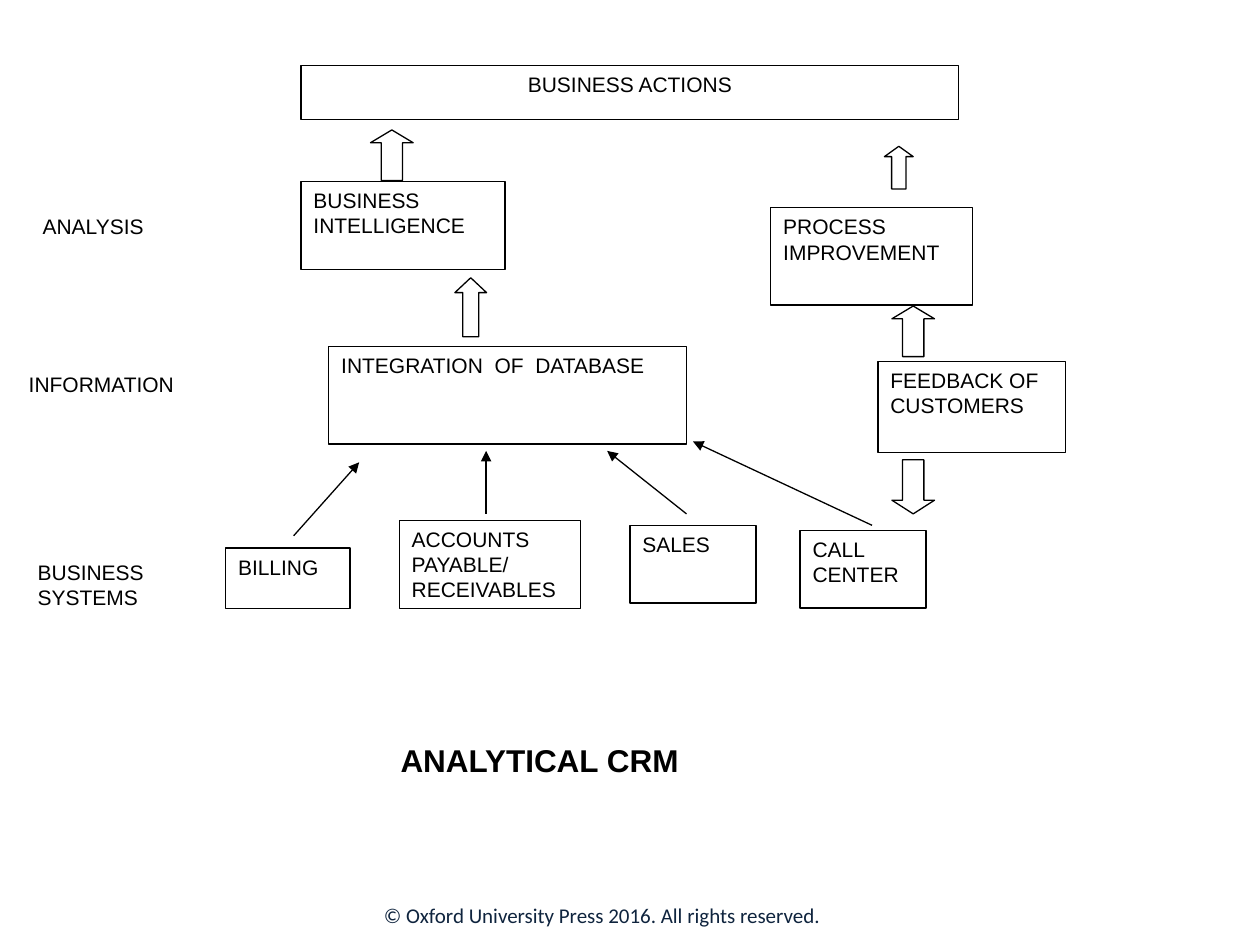
from lxml.etree import SubElement
from pptx import Presentation
from pptx.dml.color import RGBColor
from pptx.enum.shapes import MSO_CONNECTOR as Link, MSO_SHAPE as Preset
from pptx.enum.text import MSO_ANCHOR as Anchor, PP_ALIGN as Align
from pptx.oxml.ns import qn
from pptx.util import Cm, Pt

COLORS = {"ink": "000000", "paper": "FFFFFF", "copyright": "0F243E"}

ANALYSIS = {
    "label": ("ANALYSIS", 0.31, 0.22, 2.57, 2.69, 1.49),
    "nodes": [
        ("BUSINESS\nINTELLIGENCE", 5.77, 1.06, 4.11, 1.78),
        ("PROCESS\nIMPROVEMENT", 15.24, 1.59, 4.06, 1.96),
    ],
    "arrows": [
        (Preset.UP_ARROW, 7.17, 0.02, 0.86, 1.02, 0.3),
        (Preset.UP_ARROW, 17.53, 0.35, 0.58, 0.86, 0.36),
    ],
    "flows": [],
}
INFORMATION = {
    "label": ("INFORMATION", 0.03, 1.23, 3.48, 2.06, 0.67),
    "nodes": [
        ("INTEGRATION  OF  DATABASE", 6.33, 1.39, 7.21, 1.96),
        ("FEEDBACK OF CUSTOMERS", 17.4, 1.69, 3.78, 1.83),
    ],
    "arrows": [
        (Preset.UP_ARROW, 8.87, 0, 0.64, 1.19, 0.47),
        (Preset.UP_ARROW, 17.68, 0.57, 0.86, 1.02, 0.3),
    ],
    "flows": [],
}
SYSTEMS = {
    "label": ("BUSINESS\nSYSTEMS", 0.21, 1.69, 2.67, 3.07, 0.69),
    "nodes": [
        ("BILLING", 4.25, 2.15, 2.51, 1.22),
        ("ACCOUNTS PAYABLE/ RECEIVABLES", 7.75, 1.59, 3.66, 1.78),
        ("SALES", 12.4, 1.69, 2.54, 1.57),
        ("CALL\nCENTER", 15.83, 1.79, 2.54, 1.57),
    ],
    "arrows": [(Preset.DOWN_ARROW, 17.68, 0.37, 0.86, 1.09, 0.32)],
    "flows": [
        (5.62, 1.9, 6.94, 0.42),
        (9.5, 1.46, 9.5, 0.19),
        (13.54, 1.46, 11.94, 0.19),
        (17.28, 1.69, 13.67, 0),
    ],
}


def color(name):
    return RGBColor.from_string(COLORS[name])


def write(shape, wording, size=12, font="Arial", ink="ink", bold=False,
          align=Align.LEFT, anchor=Anchor.TOP):
    frame = shape.text_frame
    frame.text = wording
    frame.word_wrap = True
    frame.vertical_anchor = anchor
    for paragraph in frame.paragraphs:
        paragraph.alignment = align
        for run in paragraph.runs:
            run.font.size = Pt(size)
            run.font.name = font
            run.font.bold = bold
            run.font.color.rgb = color(ink)


def add_outlined(slide, preset, left, top, width, height):
    shape = slide.shapes.add_shape(preset, Cm(left), Cm(top), Cm(width), Cm(height))
    shape.shadow.inherit = False
    shape.fill.solid()
    shape.fill.fore_color.rgb = color("paper")
    shape.line.color.rgb = color("ink")
    shape.line.width = Pt(0.75)
    return shape


def add_flow(slide, x1, y1, x2, y2):
    flow = slide.shapes.add_connector(Link.STRAIGHT, Cm(x1), Cm(y1), Cm(x2), Cm(y2))
    flow.line.color.rgb = color("ink")
    flow.line.width = Pt(0.75)
    SubElement(flow.line._get_or_add_ln(), qn("a:tailEnd"), type="triangle")
    SubElement(flow._element.spPr, qn("a:effectLst"))


def draw_actions(slide, left, top, width, height):
    actions = add_outlined(slide, Preset.RECTANGLE, left, top, width, height)
    write(actions, "BUSINESS ACTIONS", align=Align.CENTER)


def draw_level(slide, left, top, level):
    for wording, x, y, width, height in level["nodes"]:
        node = add_outlined(slide, Preset.RECTANGLE, left + x, top + y, width, height)
        write(node, wording)
    for preset, x, y, width, height, head in level["arrows"]:
        arrow = add_outlined(slide, preset, left + x, top + y, width, height)
        arrow.adjustments[1] = head
    for x1, y1, x2, y2 in level["flows"]:
        add_flow(slide, left + x1, top + y1, left + x2, top + y2)

    wording, x, y, width, height, inset = level["label"]
    label = slide.shapes.add_textbox(Cm(left + x), Cm(top + y), Cm(width), Cm(height))
    write(label, wording)
    label.text_frame.margin_top = Cm(inset)
    label.text_frame.margin_right = 0


def draw_title(slide, left, top, width, height):
    title = slide.shapes.title
    title.left, title.top = Cm(left), Cm(top)
    title.width, title.height = Cm(width), Cm(height)
    write(title, "ANALYTICAL CRM", size=18, bold=True)


def draw_copyright(slide, left, top, width, height):
    notice = slide.shapes.add_textbox(Cm(left), Cm(top), Cm(width), Cm(height))
    write(notice, "© Oxford University Press 2016. All rights reserved.",
          font="Calibri", ink="copyright", anchor=Anchor.MIDDLE)


def main():
    deck = Presentation()
    deck.slide_width, deck.slide_height = Cm(25.4), Cm(19.05)
    slide = deck.slides.add_slide(deck.slide_layouts[5])
    draw_actions(slide, 6.07, 1.32, 13.26, 1.09)
    for top, level in ((2.6, ANALYSIS), (5.6, INFORMATION), (8.9, SYSTEMS)):
        draw_level(slide, 0.3, top, level)
    draw_title(slide, 7.82, 14.81, 6.17, 1.8)
    draw_copyright(slide, 7.49, 17.93, 10.62, 1.02)
    deck.save("out.pptx")


if __name__ == "__main__":
    main()
